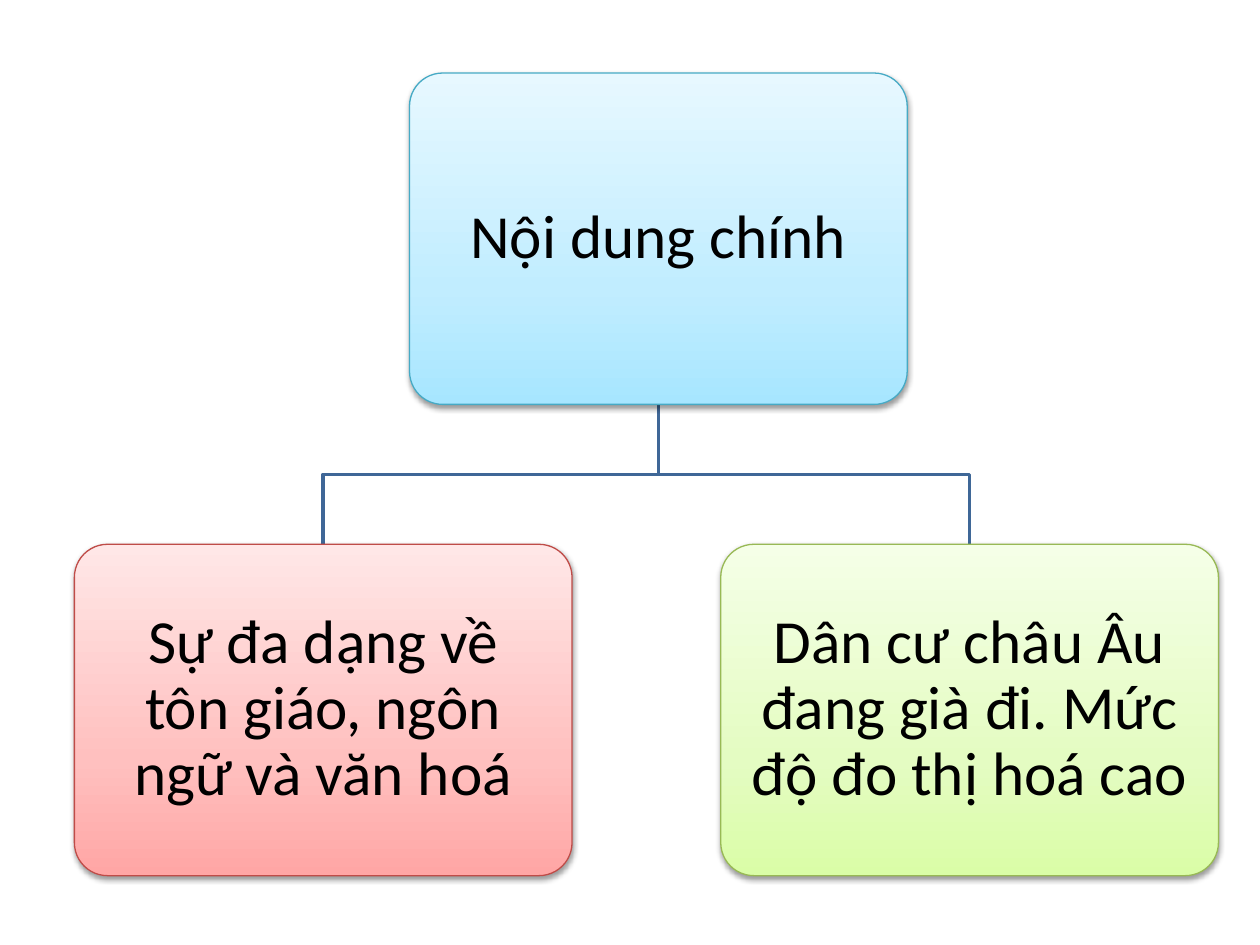
from copy import deepcopy
from pptx import Presentation
from pptx.dml.color import RGBColor
from pptx.enum.shapes import MSO_SHAPE
from pptx.enum.text import MSO_ANCHOR, PP_ALIGN
from pptx.oxml import parse_xml
from pptx.oxml.ns import nsdecls, qn
from pptx.util import Inches, Pt

# Colours: gradient from bottom to top, then the outline
colors = {
    "blue": ["A7E6FF", "C1EDFF", "E7F8FF", "46AAC5"],
    "red": ["FFA6A5", "FFC0BF", "FFE7E7", "BF4C48"],
    "green": ["DAFDA7", "E4FCC2", "F5FFE7", "98B955"],
    "link": "3F6797",
    "text": "000000",
}
stops = [0, 0.35, 1]
wide, high = 3.95, 2.63
top, low = 0.58, 4.32
root = 3.25
nodes = [
    ("Nội dung chính", root, top, "blue"),
    ("Sự đa dạng về tôn giáo, ngôn ngữ và văn hoá", 0.59, low, "red"),
    ("Dân cư châu Âu đang già đi. Mức độ đo thị hoá cao", 5.72, low, "green"),
]
frame_style = {
    "word_wrap": True,
    "vertical_anchor": MSO_ANCHOR.MIDDLE,
    "margin_left": Inches(0.15),
    "margin_right": Inches(0.15),
    "margin_top": Inches(0.15),
    "margin_bottom": Inches(0.15),
}
font_style = {"name": "Calibri", "size": Pt(35)}
shadow = (
    f'<a:outerShdw {nsdecls("a")} blurRad="{Pt(3.1)}" dist="{Pt(1.6)}" '
    'dir="5400000" rotWithShape="0"><a:srgbClr val="000000">'
    '<a:alpha val="38000"/></a:srgbClr></a:outerShdw>'
)

deck = Presentation()
deck.slide_width, deck.slide_height = Inches(10), Inches(7.5)
slide = deck.slides.add_slide(deck.slide_layouts[6])

# Links from the main node down to its children
start, base = root + wide / 2, top + high
bend = (base + low) / 2
for _, left, _, _ in nodes[1:]:
    end = left + wide / 2
    pen = slide.shapes.build_freeform(Inches(start), Inches(base))
    turns = [(start, bend), (end, bend), (end, low)]
    pen.add_line_segments([(Inches(x), Inches(y)) for x, y in turns], close=False)
    link = pen.convert_to_shape()
    link.shadow.inherit = False
    link.fill.background()
    link.line.color.rgb = RGBColor.from_string(colors["link"])
    link.line.width = Pt(2)

# Nodes
for text, left, y, tone in nodes:
    node = slide.shapes.add_shape(
        MSO_SHAPE.ROUNDED_RECTANGLE,
        Inches(left), Inches(y), Inches(wide), Inches(high))
    node.adjustments[0] = 0.1
    *shades, edge = colors[tone]

    # Three-stop gradient and outline
    node.fill.gradient()
    node.fill.gradient_angle = 90
    props = node.element.spPr
    marks = props.find(".//" + qn("a:gsLst"))
    marks.append(deepcopy(marks[-1]))
    for stop, place, shade in zip(node.fill.gradient_stops, stops, shades):
        stop.position = place
        stop.color.rgb = RGBColor.from_string(shade)
    node.line.color.rgb = RGBColor.from_string(edge)
    node.line.width = Pt(0.75)

    # Soft shadow below
    node.shadow.inherit = False
    props.find(qn("a:effectLst")).append(parse_xml(shadow))

    # Label
    frame = node.text_frame
    for key, value in frame_style.items():
        setattr(frame, key, value)
    para = frame.paragraphs[0]
    para.alignment = PP_ALIGN.CENTER
    para.line_spacing = 0.9
    run = para.add_run()
    run.text = text
    for key, value in font_style.items():
        setattr(run.font, key, value)
    run.font.color.rgb = RGBColor.from_string(colors["text"])

deck.save("out.pptx")
